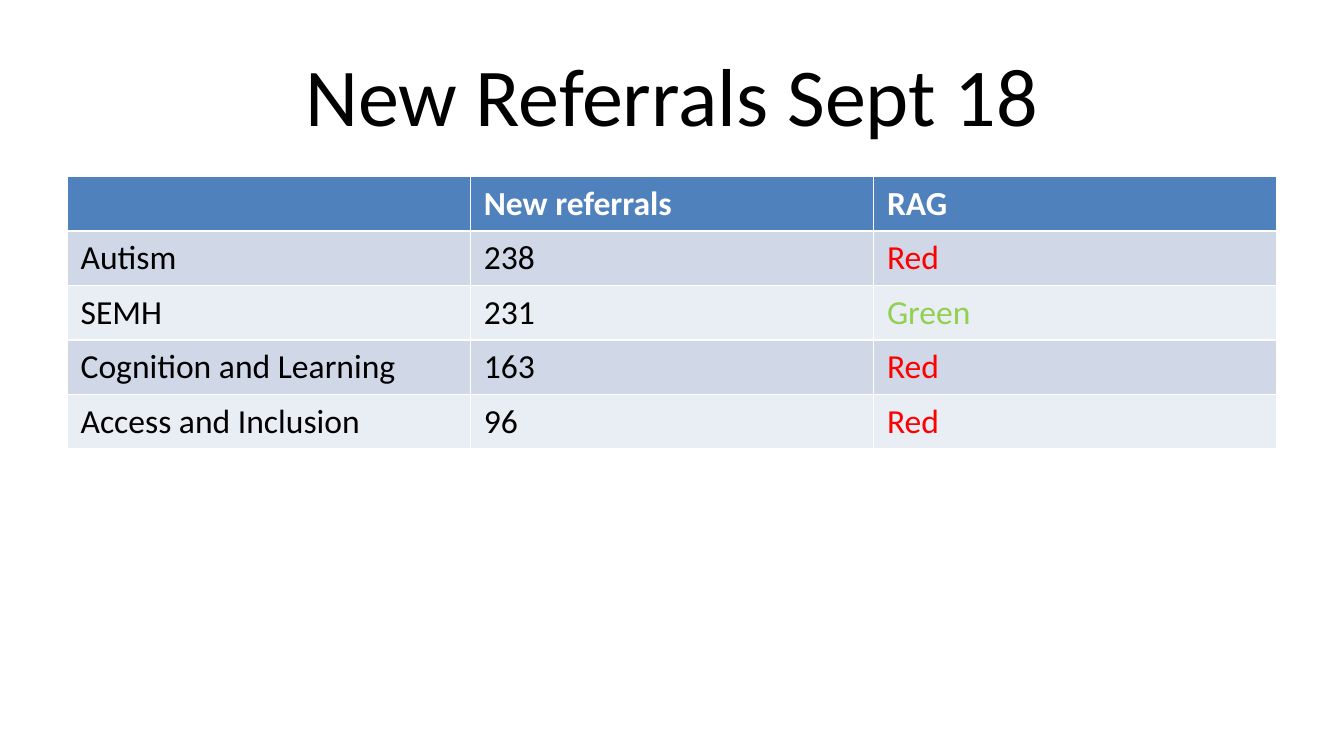
from pptx import Presentation
from pptx.dml.color import RGBColor
from pptx.enum.text import MSO_ANCHOR as Anchor, PP_ALIGN as Align
from pptx.util import Cm, Pt

BLACK = RGBColor(0x00, 0x00, 0x00)
WHITE = RGBColor(0xFF, 0xFF, 0xFF)
HEADER_BLUE = RGBColor(0x4F, 0x81, 0xBD)
BAND_DARK = RGBColor(0xD0, 0xD8, 0xE8)
BAND_LIGHT = RGBColor(0xE9, 0xED, 0xF4)
RAG_COLOURS = {
    "Red": RGBColor(0xFF, 0x00, 0x00),
    "Green": RGBColor(0x92, 0xD0, 0x50),
}

HEADINGS = ("", "New referrals", "RAG")
REFERRALS = (
    ("Autism", "238", "Red"),
    ("SEMH", "231", "Green"),
    ("Cognition and Learning", "163", "Red"),
    ("Access and Inclusion", "96", "Red"),
)


def write(paragraph, text, colour, **formats):
    run = paragraph.add_run()
    run.text = text
    run.font.color.rgb = colour
    for attribute, value in {"name": "Calibri", **formats}.items():
        setattr(run.font, attribute, value)


def add_title(slide, box, text):
    frame = slide.shapes.add_textbox(*box).text_frame
    for attribute, value in {"word_wrap": True, "vertical_anchor": Anchor.MIDDLE}.items():
        setattr(frame, attribute, value)
    heading = frame.paragraphs[0]
    heading.alignment = Align.CENTER
    write(heading, text, BLACK, size=Pt(44))


def add_referrals(slide, box):
    rows = (HEADINGS, *REFERRALS)
    referrals = slide.shapes.add_table(len(rows), len(HEADINGS), *box).table
    for row_index, row in enumerate(rows):
        is_header = row_index == 0
        band = BAND_DARK if row_index % 2 else BAND_LIGHT
        for column_index, text in enumerate(row):
            cell = referrals.cell(row_index, column_index)
            cell.fill.solid()
            cell.fill.fore_color.rgb = HEADER_BLUE if is_header else band
            colour = WHITE if is_header else RAG_COLOURS.get(text, BLACK)
            write(cell.text_frame.paragraphs[0], text, colour, size=Pt(18), bold=is_header)


def main():
    deck = Presentation()
    deck.slide_width, deck.slide_height = Cm(25.4), Cm(14.28)
    slide = deck.slides.add_slide(deck.slide_layouts[6])
    left, width = Cm(1.27), Cm(22.86)
    add_title(slide, (left, Cm(0.58), width, Cm(2.39)), "New Referrals Sept 18")
    add_referrals(slide, (left, Cm(3.33), width, Cm(5.15)))
    deck.save("out.pptx")


if __name__ == "__main__":
    main()
